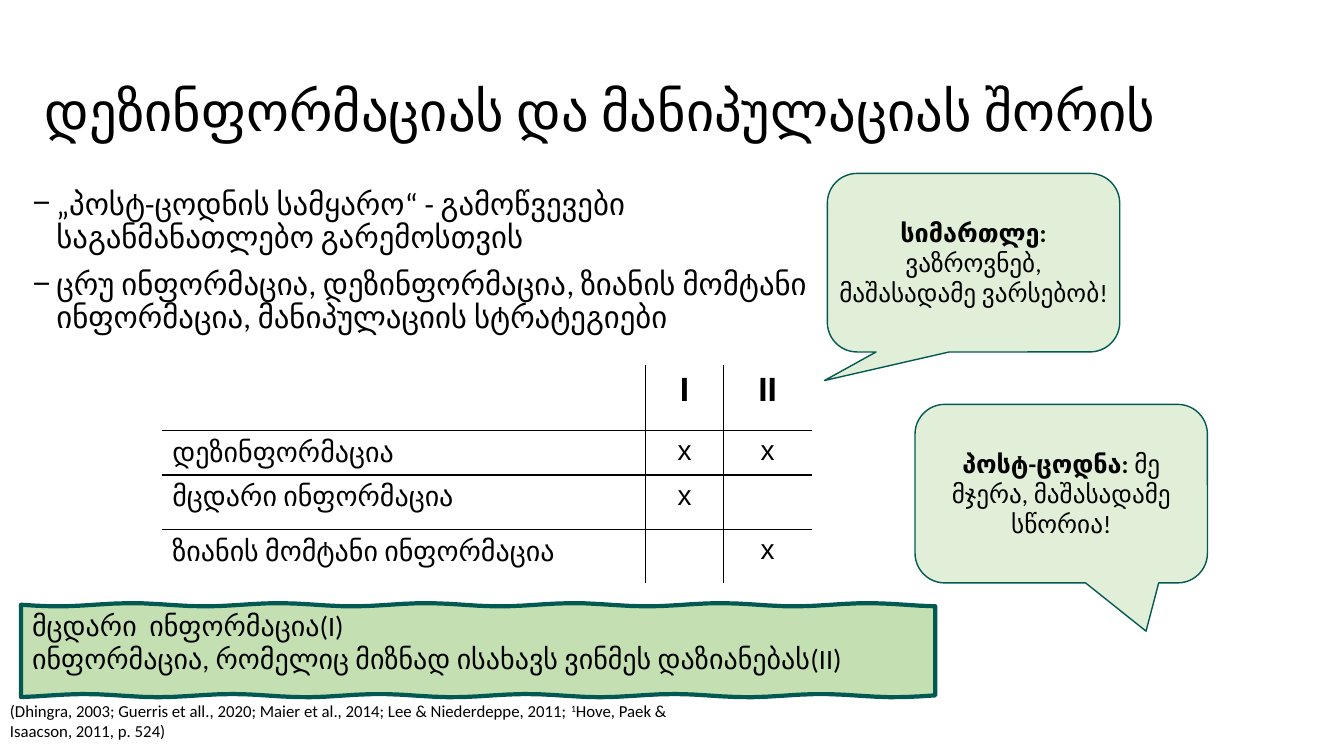
import math

from lxml import etree
from pptx import Presentation
from pptx import util as u
from pptx.dml import color
from pptx.enum import shapes, text
from pptx.oxml import ns

COLORS = {
    "ink": "000000",
    "paper": "FFFFFF",
    "outline": "025952",
    "band": "C4E0B2",
    "bubble": "E1EFD8",
}


def rgb(name):
    return color.RGBColor.from_string(COLORS[name])


def child(parent, tag, **attributes):
    return etree.SubElement(parent, ns.qn(tag), **attributes)


def add_span(para, words, size=18, font="Calibri", bold=False, raised=False):
    span = para.add_run()
    span.text = words
    span.font.size = u.Pt(size)
    span.font.name = font
    span.font.bold = bold
    span.font.color.rgb = rgb("ink")
    if raised:
        span._r.get_or_add_rPr().set("baseline", "30000")


def place(shape, box):
    shape.left, shape.top, shape.width, shape.height = (u.Cm(n) for n in box)


def set_frame(frame, anchor=text.MSO_ANCHOR.TOP, side=0.25):
    frame.word_wrap = True
    frame.auto_size = text.MSO_AUTO_SIZE.NONE
    frame.vertical_anchor = anchor
    frame.margin_left = frame.margin_right = u.Cm(side)
    frame.margin_top = frame.margin_bottom = u.Cm(0.13)


def paint(shape, fill, weight):
    shape.shadow.inherit = False
    shape.fill.solid()
    shape.fill.fore_color.rgb = rgb(fill)
    shape.line.color.rgb = rgb("outline")
    shape.line.width = u.Pt(weight)


def fill_title(page, box, words):
    title = page.shapes.title
    place(title, box)
    set_frame(title.text_frame, text.MSO_ANCHOR.MIDDLE)
    para = title.text_frame.paragraphs[0]
    para.alignment = text.PP_ALIGN.LEFT
    para.line_spacing = 0.9
    add_span(para, " ", size=44)
    add_span(para, words, size=39)


def fill_list(page, box, items):
    body = page.placeholders[1]
    place(body, box)
    frame = body.text_frame
    set_frame(frame)
    for index, item in enumerate(items):
        para = frame.add_paragraph() if index else frame.paragraphs[0]
        props = para._p.get_or_add_pPr()
        props.set("marL", str(u.Cm(0.64)))
        props.set("indent", str(u.Cm(-0.6)))
        child(child(props, "a:buClr"), "a:srgbClr", val=COLORS["ink"])
        child(props, "a:buChar", char="−")
        para.line_spacing = 0.9
        para.space_before = u.Pt(10 if index else 0)
        add_span(para, item, size=22)


def add_citation(page, box, spans):
    note = page.shapes.add_textbox(*(u.Cm(n) for n in box))
    set_frame(note.text_frame)
    for words, raised in spans:
        add_span(note.text_frame.paragraphs[0], words, size=12, raised=raised)


def add_band(page, box, lines):
    left, top, width, height = box
    steps = 60

    def edge(level, phase):
        return [
            (left + width * n / steps, level + 0.04 * math.sin(n * 0.65 + phase))
            for n in range(steps + 1)
        ]

    points = edge(top, 0) + edge(top + height, 2)[::-1]
    points = [(u.Cm(x), u.Cm(y)) for x, y in points]
    builder = page.shapes.build_freeform(*points[0])
    builder.add_line_segments(points[1:], close=True)
    band = builder.convert_to_shape()
    paint(band, "band", 3)
    set_frame(band.text_frame, side=0.28)
    for index, line in enumerate(lines):
        para = band.text_frame.add_paragraph() if index else band.text_frame.paragraphs[0]
        para.alignment = text.PP_ALIGN.LEFT
        add_span(para, line, size=20)


def add_bubble(page, box, tail, heading, words):
    bubble = page.shapes.add_shape(
        shapes.MSO_SHAPE.ROUNDED_RECTANGULAR_CALLOUT, *(u.Cm(n) for n in box)
    )
    bubble.adjustments[0], bubble.adjustments[1] = tail
    paint(bubble, "bubble", 1)
    set_frame(bubble.text_frame, text.MSO_ANCHOR.MIDDLE, side=0.03)
    para = bubble.text_frame.paragraphs[0]
    para.alignment = text.PP_ALIGN.CENTER
    add_span(para, heading, bold=True)
    add_span(para, words)


def set_borders(cell, outer_sides):
    props = cell._tc.get_or_add_tcPr()
    for side in "LRTB":
        line = child(props, f"a:ln{side}", w=str(u.Pt(1)))
        shade = COLORS["paper" if side in outer_sides else "ink"]
        child(child(line, "a:solidFill"), "a:srgbClr", val=shade)


def add_grid(page, box, widths, heights, rows):
    grid = page.shapes.add_table(
        len(rows), len(widths), *(u.Cm(n) for n in box)
    ).table
    grid.first_row = grid.horz_banding = False
    for column, width in zip(grid.columns, widths):
        column.width = u.Cm(width)
    for row, height in zip(grid.rows, heights):
        row.height = u.Cm(height)
    for r, row in enumerate(rows):
        for c, words in enumerate(row):
            cell = grid.cell(r, c)
            outer = {"T": r == 0, "B": r == len(rows) - 1,
                     "L": c == 0, "R": c == len(row) - 1}
            set_borders(cell, [side for side in outer if outer[side]])
            cell.fill.solid()
            cell.fill.fore_color.rgb = rgb("paper")
            para = cell.text_frame.paragraphs[0]
            para.alignment = text.PP_ALIGN.CENTER if c else text.PP_ALIGN.LEFT
            if words:
                add_span(para, words, size=20 if r else 24, bold=r == 0,
                         font="Arial" if c else "Calibri")


def main():
    deck = Presentation()
    deck.slide_width, deck.slide_height = u.Cm(33.87), u.Cm(19.05)
    page = deck.slides.add_slide(deck.slide_layouts[1])
    fill_title(page, (0.53, 0.97, 32.79, 3.68), "დეზინფორმაციას და მანიპულაციას შორის")
    fill_list(page, (0.53, 4.62, 20.57, 11.96), [
        "„პოსტ-ცოდნის სამყარო“ - გამოწვევები საგანმანათლებო გარემოსთვის",
        "ცრუ ინფორმაცია, დეზინფორმაცია, ზიანის მომტანი ინფორმაცია, მანიპულაციის სტრატეგიები",
    ])
    add_citation(page, (0, 17.53, 17.6, 1.02), [
        ("(Dhingra, 2003; Guerris et all., 2020; Maier et al., 2014; Lee & Niederdeppe, 2011; ", False),
        ("1", True),
        ("Hove, Paek & Isaacson, 2011, p. 524)", False),
    ])
    add_band(page, (0.53, 15.24, 23.04, 2.29), [
        "მცდარი  ინფორმაცია(I)",
        "ინფორმაცია, რომელიც მიზნად ისახავს ვინმეს დაზიანებას(II)",
    ])
    add_bubble(page, (20.85, 4.37, 7.37, 4.5), (-0.51, 0.66),
               "სიმართლე: ", "ვაზროვნებ, მაშასადამე ვარსებობ!")
    add_bubble(page, (23.06, 10.19, 7.37, 4.5), (0.29, 0.77),
               "პოსტ-ცოდნა: ", "მე მჯერა, მაშასადამე სწორია!")
    add_grid(page, (4.09, 9.22, 16.36, 5.46), (12.17, 1.98, 2.21), (1.63, 1.09, 1.37, 1.37), [
        ("", "I", "II"),
        ("დეზინფორმაცია", "x", "x"),
        ("მცდარი ინფორმაცია", "x", ""),
        ("ზიანის მომტანი ინფორმაცია", "", "x"),
    ])
    deck.save("out.pptx")


if __name__ == "__main__":
    main()
